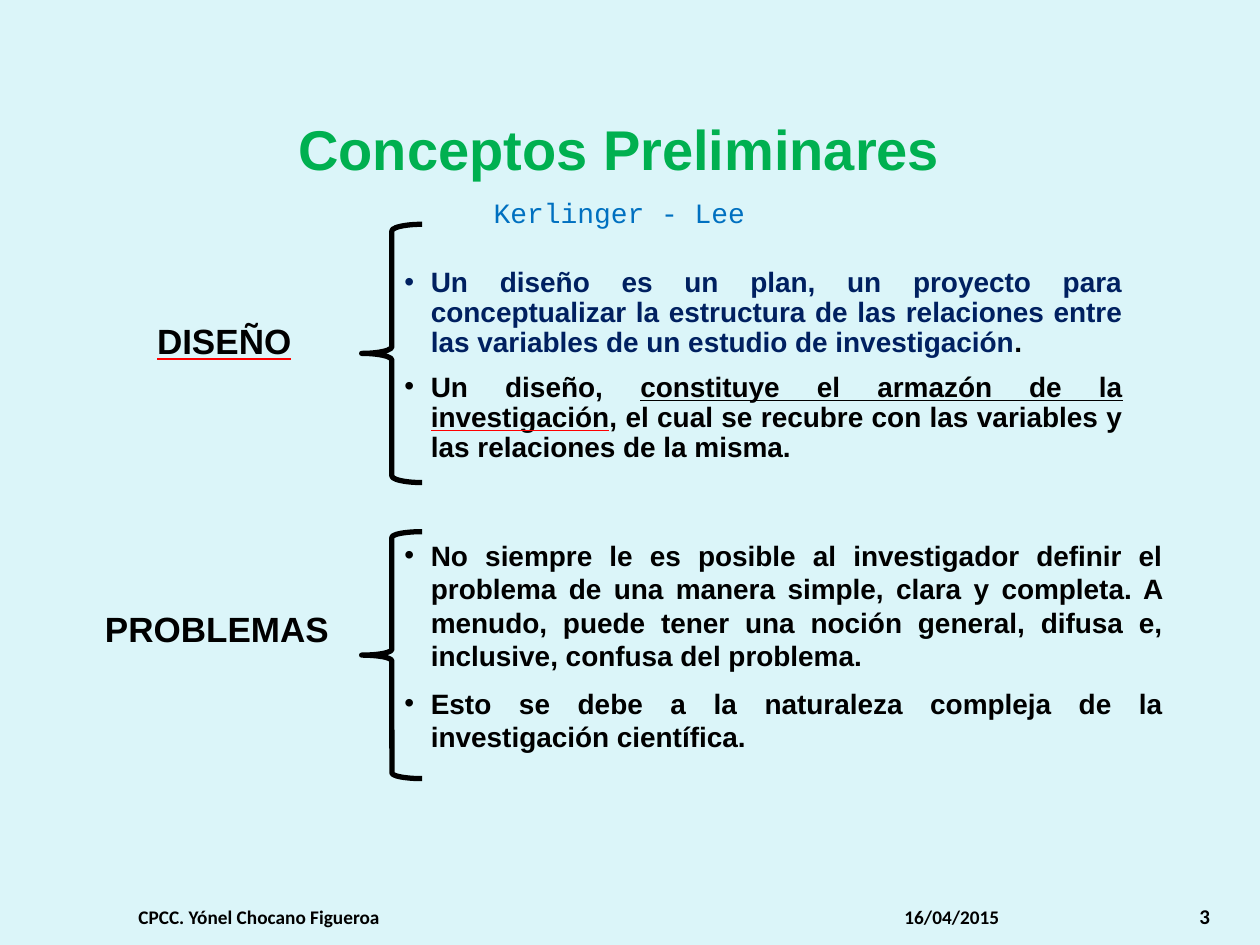
from lxml import etree
from pptx import Presentation
from pptx.dml.color import RGBColor
from pptx.enum.shapes import MSO_SHAPE
from pptx.enum.text import MSO_ANCHOR, MSO_AUTO_SIZE, PP_ALIGN
from pptx.oxml.ns import qn
from pptx.util import Inches, Pt

LEFT_BRACE = MSO_SHAPE.LEFT_BRACE
TOP, MIDDLE, BOTTOM = MSO_ANCHOR.TOP, MSO_ANCHOR.MIDDLE, MSO_ANCHOR.BOTTOM
LEFT, CENTER, RIGHT = PP_ALIGN.LEFT, PP_ALIGN.CENTER, PP_ALIGN.RIGHT
JUSTIFY = PP_ALIGN.JUSTIFY
NO_AUTOFIT = MSO_AUTO_SIZE.NONE

BACKGROUND = RGBColor(0xDB, 0xF5, 0xF9)
BLACK = RGBColor(0, 0, 0)
GREEN = RGBColor(0x00, 0xB0, 0x50)
BLUE = RGBColor(0x00, 0x70, 0xC0)
NAVY = RGBColor(0x00, 0x20, 0x60)
RED = RGBColor(0xFF, 0, 0)


def place(box, position, anchor):
    box.left, box.top, box.width, box.height = map(Inches, position)
    frame = box.text_frame
    frame.word_wrap = True
    frame.auto_size = NO_AUTOFIT
    frame.vertical_anchor = anchor
    return frame


def add_span(para, text, size, color=BLACK, font="Arial", bold=True, underline=None):
    span = para.add_run()
    span.text = text
    span.font.size = Pt(size)
    span.font.bold = bold
    span.font.color.rgb = color
    span.font.name = font
    if underline is not None:
        span.font.underline = True
        # Underline colour goes just before the typeface
        line_fill = etree.Element(qn("a:uFill"))
        solid = etree.SubElement(line_fill, qn("a:solidFill"))
        etree.SubElement(solid, qn("a:srgbClr"), val=str(underline))
        span.font._element.find(qn("a:latin")).addprevious(line_fill)


deck = Presentation()
deck.slide_width, deck.slide_height = Inches(10), Inches(7.5)
page = deck.slides.add_slide(deck.slide_layouts[3])
page.background.fill.solid()
page.background.fill.fore_color.rgb = BACKGROUND
title, design_list, problem_list = list(page.placeholders)[:3]

# Title and authors
frame = place(title, (1.83, 0.84, 6.17, 1.04), MIDDLE)
heading, authors = frame.paragraphs[0], frame.add_paragraph()
heading.alignment = authors.alignment = CENTER
authors.space_before = Pt(8)
add_span(heading, "Conceptos Preliminares", 32, GREEN)
add_span(authors, "Kerlinger - Lee", 16, BLUE, "Courier New", False)

# Bulleted lists: each item is a list of (text, colour, underline colour)
design_items = [
    [("Un diseño es un plan, un proyecto para conceptualizar la estructura de las "
      "relaciones entre las variables de un estudio de investigación", NAVY, None),
     (".", BLACK, None)],
    [("Un diseño, ", BLACK, None),
     ("constituye el armazón de la ", BLACK, BLACK),
     ("investigación", BLACK, RED),
     (", el cual se recubre con las variables y las relaciones de la misma.", BLACK, None)],
]
problem_items = [
    [("No siempre le es posible al investigador definir el problema de una manera "
      "simple, clara y completa. A menudo, puede tener una noción general, difusa e, "
      "inclusive, confusa del problema.", BLACK, None)],
    [("Esto se debe a la naturaleza compleja de la investigación científica.", BLACK, None)],
]
lists = [
    (design_list, (3.11, 2.08, 5.9, 1.69), 0.9, design_items),
    (problem_list, (3.11, 4.22, 6.22, 1.97), 1.0, problem_items),
]
for box, position, spacing, items in lists:
    frame = place(box, position, TOP)
    for number, item in enumerate(items):
        para = frame.add_paragraph() if number else frame.paragraphs[0]
        para.alignment = JUSTIFY
        para.line_spacing = spacing
        para.space_before = Pt(8 if number else 0)
        properties = para._p.get_or_add_pPr()
        properties.set("marL", str(Inches(0.21)))
        properties.set("indent", str(-Inches(0.21)))
        for text, color, underline in item:
            add_span(para, text, 16, color, underline=underline)

# Braces
for top, height, curve in [(1.78, 2.05, 0.11), (4.22, 1.96, 0.095)]:
    brace = page.shapes.add_shape(
        LEFT_BRACE, Inches(2.87), Inches(top), Inches(0.48), Inches(height))
    brace.adjustments[0], brace.adjustments[1] = curve, 0.5
    brace.shadow.inherit = False
    brace.fill.background()
    brace.line.color.rgb = BLACK
    brace.line.width = Pt(3)

# Labels and footer
captions = [
    ("DISEÑO", (0.68, 2.49, 2.2, 0.43), TOP, CENTER, 20, "Arial", RED),
    ("PROBLEMAS", (0.35, 4.77, 2.36, 0.43), TOP, RIGHT, 20, "Arial", None),
    ("CPCC. Yónel Chocano Figueroa", (1, 7.02, 6.08, 0.4), BOTTOM, LEFT, 11, "Calibri", None),
    ("16/04/2015", (7.08, 7.02, 2.33, 0.4), BOTTOM, LEFT, 11, "Calibri", None),
    ("3", (9.42, 7.02, 0.5, 0.4), BOTTOM, LEFT, 12, "Calibri", None),
]
for text, position, anchor, alignment, size, font, underline in captions:
    box = page.shapes.add_textbox(*map(Inches, position))
    para = place(box, position, anchor).paragraphs[0]
    para.alignment = alignment
    add_span(para, text, size, font=font, underline=underline)

deck.save("out.pptx")
